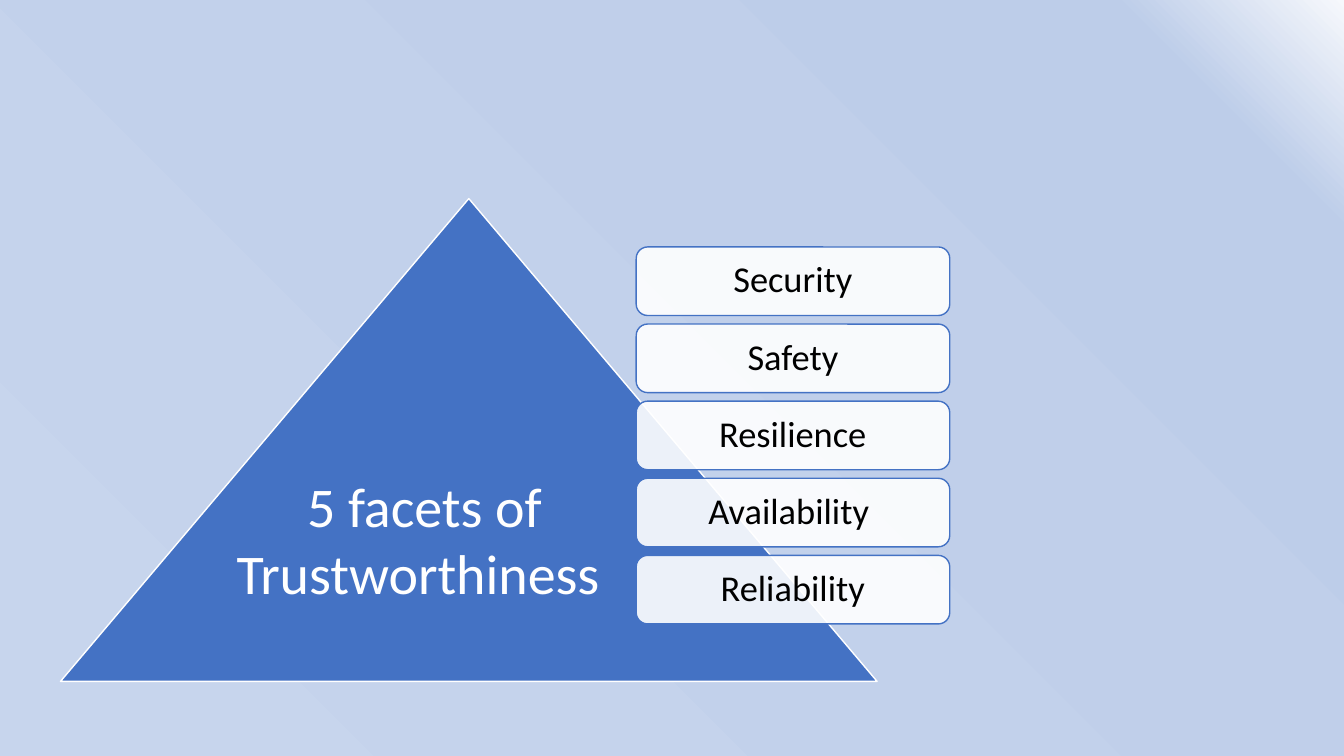
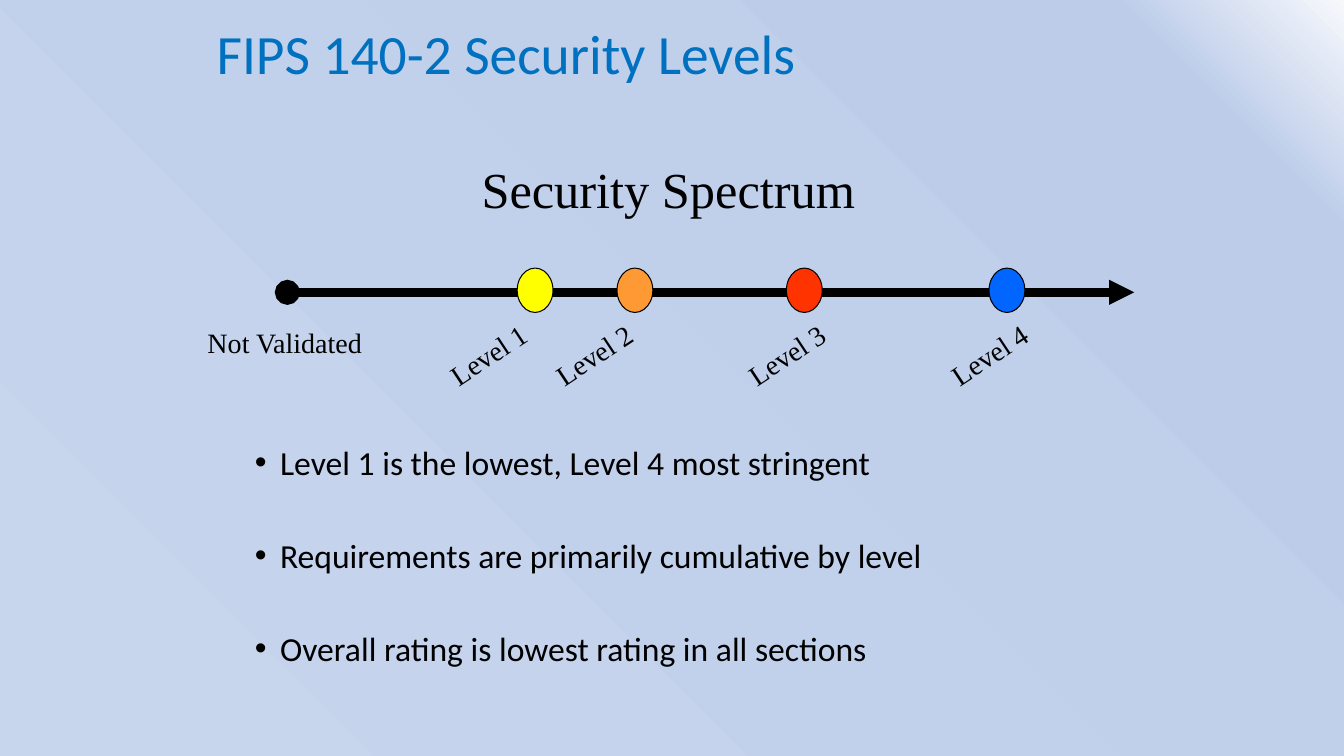
import pptx
import pptx.util
import pptx.dml.color
import pptx.enum.shapes
import pptx.enum.text
import pptx.oxml
import pptx.oxml.ns
import copy

RGB = pptx.dml.color.RGBColor
BLUE = RGB(0x44, 0x72, 0xC4)
TITLE = RGB(0x00, 0x70, 0xC0)
WHITE = RGB(0xFF, 0xFF, 0xFF)
BLACK = RGB(0x00, 0x00, 0x00)
YELLOW = RGB(0xFF, 0xFF, 0x00)
ORANGE = RGB(0xFF, 0x99, 0x33)
RED = RGB(0xFF, 0x33, 0x00)
AZURE = RGB(0x00, 0x66, 0xFF)
SKY = [(0, RGB(0xF6, 0xF8, 0xFC)), (0.11, RGB(0xBD, 0xCD, 0xE9)), (1, RGB(0xC7, 0xD5, 0xED))]

SANS, SERIF = "Calibri", "Times New Roman"
CELL = pptx.util.Inches(0.1)
FORM = pptx.enum.shapes.MSO_SHAPE
MID = pptx.enum.text.MSO_ANCHOR.MIDDLE
LEFT = pptx.enum.text.PP_ALIGN.LEFT
CENTER = pptx.enum.text.PP_ALIGN.CENTER


def grid(*cells):
    return [round(cell * CELL) for cell in cells]


def add_tag(host, tag, **attrs):
    node = pptx.oxml.parse_xml(f"<a:{tag} {pptx.oxml.ns.nsdecls('a')}/>")
    for key, val in attrs.items():
        node.set(key, val)
    host.append(node)


def assign(item, vals):
    for key, val in vals.items():
        setattr(item, key, val)


class Deck:
    def __init__(self):
        self.show = pptx.Presentation()
        assign(self.show, {"slide_width": pptx.util.Inches(13.33), "slide_height": pptx.util.Inches(7.5)})

    def page(self):
        self.slide = self.show.slides.add_slide(self.show.slide_layouts[6])
        fill = self.slide.background.fill
        fill.gradient()
        fill.gradient_angle = 225
        stops = self.slide._element.xpath(".//a:gsLst")[0]
        stops.append(copy.deepcopy(stops[-1]))
        for stop, (place, color) in zip(fill.gradient_stops, SKY):
            stop.position = place
            stop.color.rgb = color

    def words(self, frame, lines, size, face=SANS, color=BLACK, align=LEFT, space=1.0, gap=0, bullet=None):
        for num, line in enumerate(lines):
            para = frame.paragraphs[0] if num == 0 else frame.add_paragraph()
            para.text = line
            assign(para, {"alignment": align, "line_spacing": space,
                          "space_before": pptx.util.Pt(gap if num else 0)})
            if bullet:
                props = para._p.get_or_add_pPr()
                indent = pptx.util.Inches(0.25)
                props.set("marL", str(indent))
                props.set("indent", str(-indent))
                add_tag(props, "buFont", typeface="Arial")
                add_tag(props, "buChar", char=bullet)
            assign(para.font, {"name": face, "size": pptx.util.Pt(size)})
            para.font.color.rgb = color

    def text(self, at, *lines, size, wrap=True, turn=0, anchor=None, **look):
        box = self.slide.shapes.add_textbox(*grid(*at))
        box.rotation = turn
        assign(box.text_frame, {"word_wrap": wrap, "vertical_anchor": anchor})
        self.words(box.text_frame, lines, size, **look)

    def title(self, line):
        self.text((20.5, 2.2, 85.2, 6.9), line, size=39.6, color=TITLE, anchor=MID, space=0.9)

    def shape(self, form, at, fill, edge, width=1):
        item = self.slide.shapes.add_shape(form, *grid(*at))
        item.shadow.inherit = False
        item.fill.solid()
        item.fill.fore_color.rgb = fill
        item.line.color.rgb = edge
        item.line.width = pptx.util.Pt(width)
        return item

    def card(self, at, line):
        item = self.shape(FORM.ROUNDED_RECTANGLE, at, WHITE, BLUE)
        add_tag(item._element.spPr.xpath("./a:solidFill/a:srgbClr")[0], "alpha", val="90000")
        item.text_frame.vertical_anchor = MID
        self.words(item.text_frame, [line], 26, align=CENTER, space=0.9)

    def arrow(self, start, end, width):
        kind = pptx.enum.shapes.MSO_CONNECTOR.STRAIGHT
        item = self.slide.shapes.add_connector(kind, *grid(*start, *end))
        item.line.color.rgb = BLACK
        item.line.width = pptx.util.Pt(width)
        edge = item.line._get_or_add_ln()
        add_tag(edge, "headEnd", type="oval")
        add_tag(edge, "tailEnd", type="triangle")
        add_tag(item._element.spPr, "effectLst")


def facets(deck):
    deck.page()
    deck.shape(FORM.ISOSCELES_TRIANGLE, (6, 19.7, 81, 47.9), BLUE, WHITE)
    names = ["Security", "Safety", "Resilience", "Availability ", "Reliability"]
    for row, name in enumerate(names):
        deck.card((63.1, 24.5 + 7.65 * row, 31.1, 6.8), name)
    deck.text((21.1, 46.3, 42, 21.2), "5 facets of Trustworthiness ", size=40, color=WHITE, align=CENTER)


def levels(deck):
    deck.page()
    deck.text((24.3, 44.1, 85.8, 24),
              "Level 1 is the lowest, Level 4 most stringent",
              "Requirements are primarily cumulative by level",
              "Overall rating is lowest rating in all sections",
              size=24, space=0.8, gap=43.4, bullet="•")
    deck.arrow((28.5, 29), (112.5, 29), 6)
    deck.text((19.6, 31.8, 17.7, 4.3), "Not Validated", size=20, face=SERIF, wrap=False)
    deck.text((20.5, 15.2, 91.6, 7), "Security Spectrum", size=36, face=SERIF, align=CENTER)
    marks = [(51.3, 43.2, YELLOW), (61.2, 53.7, ORANGE), (78, 72.8, RED), (98.1, 92.9, AZURE)]
    for num, (dot, tag, color) in enumerate(marks, 1):
        deck.text((tag, 33, 10.4, 4.3), f"Level {num}", size=20, face=SERIF, wrap=False, turn=326.5)
        deck.shape(FORM.OVAL, (dot, 26.6, 3.55, 4.4), color, BLACK, 0.75)
    deck.title("FIPS 140-2 Security Levels")


def main():
    deck = Deck()
    facets(deck)
    levels(deck)
    deck.show.save("out.pptx")


if __name__ == "__main__":
    main()
